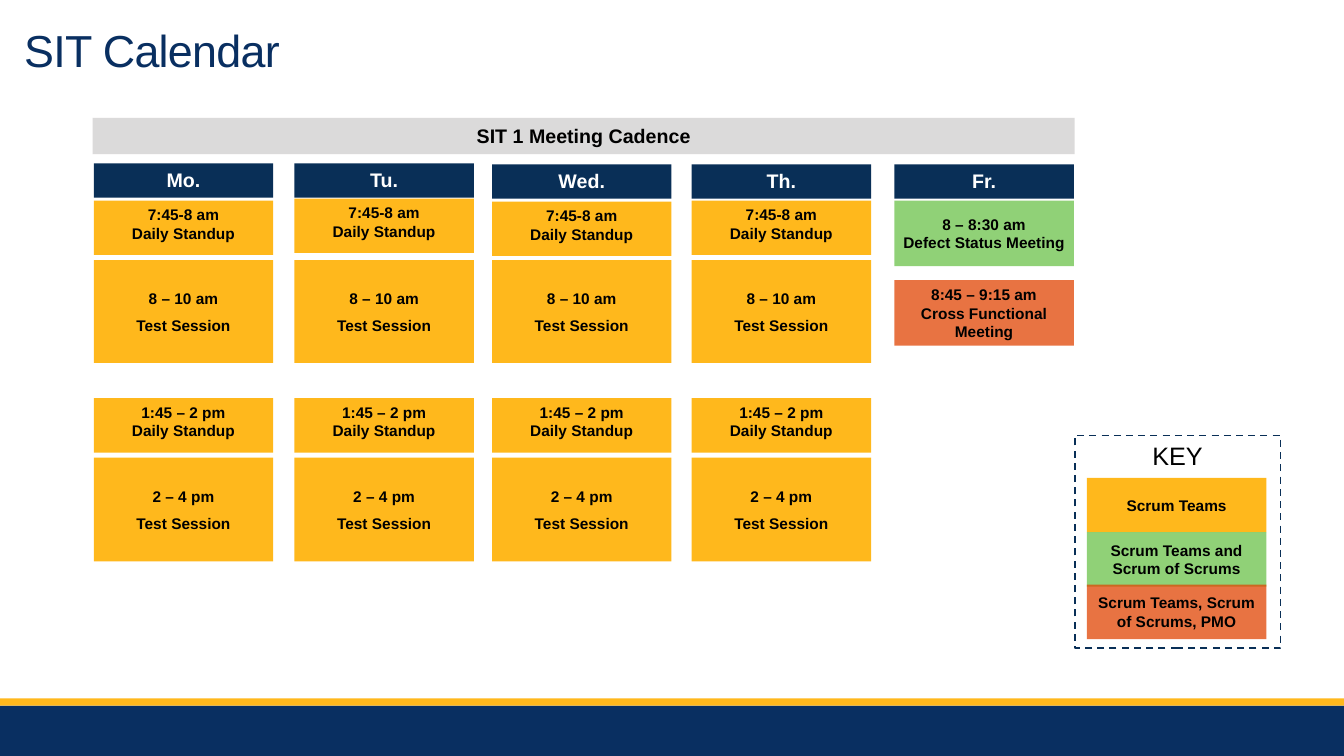
from dataclasses import dataclass
from typing import Optional

from lxml.etree import SubElement
from pptx import Presentation
from pptx.dml.color import RGBColor
from pptx.enum.dml import MSO_LINE_DASH_STYLE as Dash
from pptx.enum.shapes import MSO_SHAPE as Preset
from pptx.enum.text import MSO_ANCHOR as Anchor, PP_ALIGN as Align
from pptx.oxml.ns import qn
from pptx.shapes.autoshape import Shape
from pptx.slide import Slide
from pptx.text.text import TextFrame
from pptx.util import Inches, Pt

COLORS = {
    "footer": "092F61",
    "navy": "092F57",
    "gold": "FFB81C",
    "green": "6CC24A",
    "orange": "E14504",
    "gray": "D0CECE",
    "black": "000000",
    "white": "FFFFFF",
}
OPACITY = {"green": 75, "orange": 75, "gray": 75}
INSETS = {f"margin_{side}": Inches(0.05) for side in ("left", "top", "right", "bottom")}
BLOCK_WIDTH = 1.78


@dataclass
class Style:
    fill: str
    size: int = 11
    color: str = "black"
    anchor: Anchor = Anchor.MIDDLE
    space_after: int = 0


@dataclass
class Block:
    left: float
    top: float
    width: float
    height: float
    style: Style
    lines: tuple[str, ...] = ()


@dataclass
class Day:
    name: str
    left: float
    header_top: float
    standup_top: Optional[float] = None


@dataclass
class Session:
    top: float
    height: float
    style: Style
    lines: tuple[str, str]


HEADER = Style("navy", 14, "white", Anchor.TOP, 3)
STANDUP = Style("gold", anchor=Anchor.TOP)
TESTING = Style("gold", space_after=6)
TEAMS = Style("gold")
SCRUMS = Style("green")
PMO = Style("orange")

DAYS = [
    Day("Mo.", 0.93, 1.62, 1.99),
    Day("Tu.", 2.92, 1.62, 1.97),
    Day("Wed.", 4.88, 1.63, 2),
    Day("Th.", 6.86, 1.63, 1.99),
    Day("Fr.", 8.87, 1.63),
]
SESSIONS = [
    Session(2.58, 1.02, TESTING, ("8 – 10 am", "Test Session")),
    Session(3.95, 0.54, STANDUP, ("1:45 – 2 pm", "Daily Standup")),
    Session(4.54, 1.03, TESTING, ("2 – 4 pm", "Test Session")),
]
FRIDAY = [
    Session(1.99, 0.65, SCRUMS, ("8 – 8:30 am", "Defect Status Meeting")),
    Session(2.78, 0.65, PMO, ("8:45 – 9:15 am", "Cross Functional Meeting")),
]
KEY = [
    Block(10.78, 4.74, BLOCK_WIDTH, 0.54, TEAMS, ("Scrum Teams",)),
    Block(10.78, 5.28, BLOCK_WIDTH, 0.54, SCRUMS, ("Scrum Teams and Scrum of Scrums",)),
    Block(10.78, 5.8, BLOCK_WIDTH, 0.54, PMO, ("Scrum Teams, Scrum of Scrums, PMO",)),
]


def apply(target: object, values: dict) -> None:
    for attribute, value in values.items():
        setattr(target, attribute, value)


def rgb(name: str) -> RGBColor:
    return RGBColor.from_string(COLORS[name])


def write(frame: TextFrame, lines: tuple[str, ...], size: int, color: str,
          bold: bool = False, align: Align = Align.CENTER, space_after: int = 0) -> None:
    for index, line in enumerate(lines):
        paragraph = frame.paragraphs[0] if index == 0 else frame.add_paragraph()
        apply(paragraph, {"alignment": align, "space_after": Pt(space_after)})
        run = paragraph.add_run()
        run.text = line
        apply(run.font, {"name": "Arial", "size": Pt(size), "bold": bold})
        run.font.color.rgb = rgb(color)


def add_rectangle(slide: Slide, left: float, top: float, width: float, height: float) -> Shape:
    rectangle = slide.shapes.add_shape(
        Preset.RECTANGLE, Inches(left), Inches(top), Inches(width), Inches(height))
    rectangle.shadow.inherit = False
    return rectangle


def draw_block(slide: Slide, block: Block) -> None:
    style = block.style
    rectangle = add_rectangle(slide, block.left, block.top, block.width, block.height)
    rectangle.line.fill.background()
    rectangle.fill.solid()
    rectangle.fill.fore_color.rgb = rgb(style.fill)
    if style.fill in OPACITY:
        tint = rectangle.fill._xPr.find(qn("a:solidFill"))[0]
        SubElement(tint, qn("a:alpha"), val=str(OPACITY[style.fill] * 1000))
    frame = rectangle.text_frame
    apply(frame, {**INSETS, "word_wrap": True, "vertical_anchor": style.anchor})
    write(frame, block.lines, style.size, style.color, True, space_after=style.space_after)


def draw_title(slide: Slide) -> None:
    title = slide.shapes.title
    apply(title, {"left": Inches(0.14), "top": Inches(0.23),
                  "width": Inches(11), "height": Inches(0.61)})
    title.text_frame.vertical_anchor = Anchor.MIDDLE
    write(title.text_frame, ("SIT Calendar",), 32, "footer", align=Align.LEFT)
    paragraph = title.text_frame.paragraphs[0]
    paragraph.line_spacing = 0.85
    paragraph.runs[0].font._element.set("spc", "-50")


def calendar_blocks() -> list[Block]:
    blocks = [Block(0.92, 1.17, 9.74, 0.36, Style("gray", 14), ("SIT 1 Meeting Cadence",))]
    for day in DAYS:
        blocks.append(Block(day.left, day.header_top, BLOCK_WIDTH, 0.34, HEADER, (day.name,)))
        sessions = FRIDAY
        if day.standup_top is not None:
            morning = Session(day.standup_top, 0.54, STANDUP, ("7:45-8 am", "Daily Standup"))
            sessions = [morning, *SESSIONS]
        blocks += [Block(day.left, session.top, BLOCK_WIDTH, session.height,
                         session.style, session.lines) for session in sessions]
    return blocks


def draw_key_frame(slide: Slide) -> None:
    heading = slide.shapes.add_textbox(Inches(11.33), Inches(4.32), Inches(0.72), Inches(0.4))
    heading.text_frame.word_wrap = False
    write(heading.text_frame, ("KEY",), 18, "black", align=Align.LEFT)
    border = add_rectangle(slide, 10.66, 4.32, 2.04, 2.11)
    border.fill.background()
    border.line.color.rgb = rgb("navy")
    apply(border.line, {"width": Pt(1.25), "dash_style": Dash.DASH})


def main() -> None:
    deck = Presentation()
    apply(deck, {"slide_width": Inches(13.33), "slide_height": Inches(7.5)})
    slide = deck.slides.add_slide(deck.slide_layouts[5])
    footer = [Block(0, 7, 13.33, 0.5, Style("footer")),
              Block(0, 6.93, 13.33, 0.07, Style("gold"))]
    draw_title(slide)
    for block in [*footer, *calendar_blocks(), *KEY]:
        draw_block(slide, block)
    draw_key_frame(slide)
    deck.save("out.pptx")


if __name__ == "__main__":
    main()
